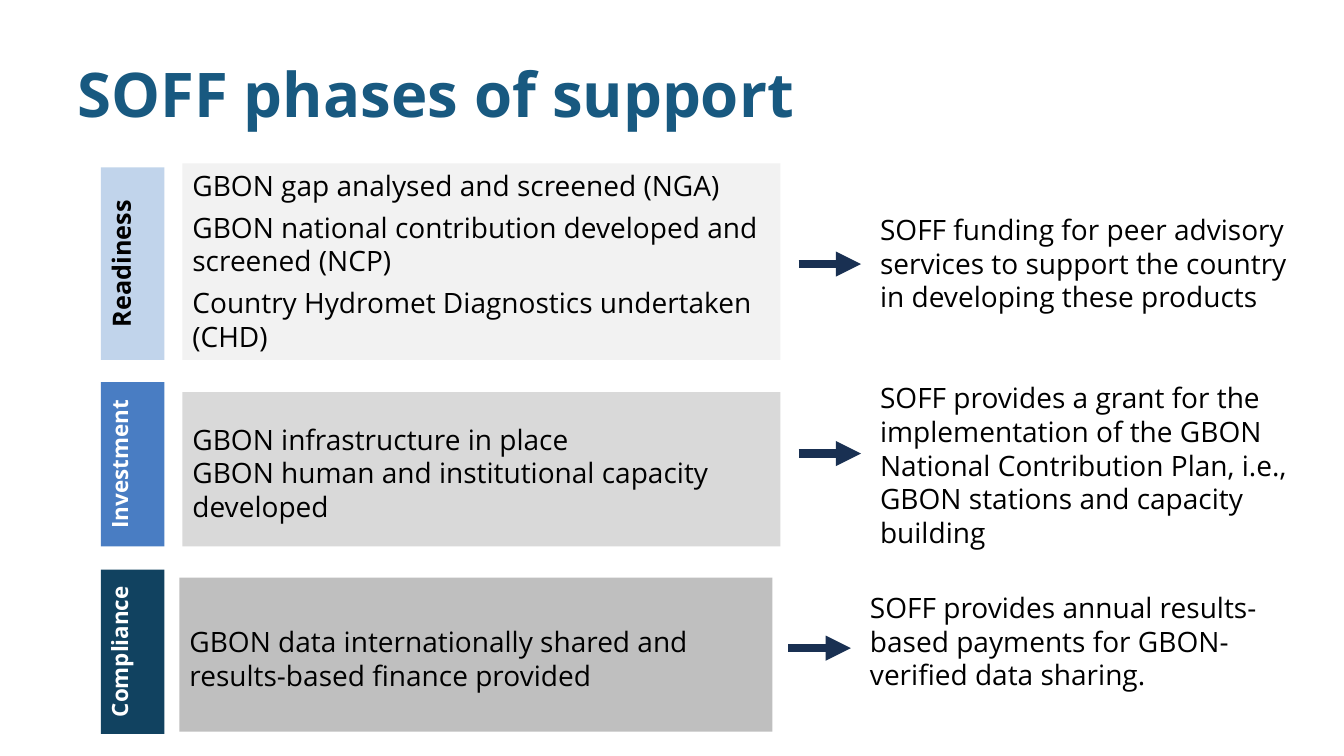
from lxml import etree
from pptx import Presentation
from pptx.dml.color import RGBColor
from pptx.enum.shapes import MSO_CONNECTOR, MSO_SHAPE
from pptx.enum.text import MSO_ANCHOR, PP_ALIGN
from pptx.oxml.ns import qn
from pptx.util import Pt

PX = 9144
FONT = "Open Sans"
RECTANGLE = MSO_SHAPE.RECTANGLE
STRAIGHT = MSO_CONNECTOR.STRAIGHT
TOP, MIDDLE = MSO_ANCHOR.TOP, MSO_ANCHOR.MIDDLE
LEFT, CENTER = PP_ALIGN.LEFT, PP_ALIGN.CENTER

BLACK = RGBColor(0x00, 0x00, 0x00)
WHITE = RGBColor(0xFF, 0xFF, 0xFF)
TITLE_BLUE = RGBColor(0x18, 0x59, 0x80)
NAVY = RGBColor(0x19, 0x30, 0x52)
PALE_BLUE = RGBColor(0xC1, 0xD4, 0xEB)
MID_BLUE = RGBColor(0x49, 0x7D, 0xC3)
DEEP_BLUE = RGBColor(0x11, 0x42, 0x60)
LIGHT_GREY = RGBColor(0xF2, 0xF2, 0xF2)
MID_GREY = RGBColor(0xD9, 0xD9, 0xD9)
DARK_GREY = RGBColor(0xBF, 0xBF, 0xBF)

LABEL_LEFT, LABEL_WIDTH = 100, 63
ARROW_LENGTH, OUTCOME_OFFSET = 62, 71

PHASES = [
    dict(label="Readiness", label_top=166, label_height=191, label_size=18,
         label_fill=PALE_BLUE, label_color=BLACK,
         panel=(181, 162, 593, 195), panel_fill=LIGHT_GREY, inset=5,
         steps=["GBON gap analysed and screened (NGA)",
                "GBON national contribution developed and screened (NCP)",
                "Country Hydromet Diagnostics undertaken (CHD)"],
         arrow=(792, 262), outcome_top=206, outcome_size=(442, 129),
         outcome="SOFF funding for peer advisory services to support the country "
                 "in developing these products"),
    dict(label="Investment", label_top=379, label_height=163, label_size=16,
         label_fill=MID_BLUE, label_color=WHITE,
         panel=(181, 389, 593, 153), panel_fill=MID_GREY, inset=30,
         steps=["GBON infrastructure in place\v"
                "GBON human and institutional capacity developed"],
         arrow=(792, 450), outcome_top=373, outcome_size=(442, 200),
         outcome="SOFF provides a grant for the implementation of the GBON "
                 "National Contribution Plan, i.e., GBON stations and capacity building"),
    dict(label="Compliance", label_top=565, label_height=163, label_size=16,
         label_fill=DEEP_BLUE, label_color=WHITE,
         panel=(178, 573, 588, 153), panel_fill=DARK_GREY, inset=47,
         steps=["GBON data internationally shared and results-based finance provided"],
         arrow=(782, 643), outcome_top=581, outcome_size=(468, 129),
         outcome="SOFF provides annual results-based payments for GBON-verified data sharing."),
]


def scaled(*lengths):
    return [round(length * PX) for length in lengths]


def write(holder, lines, size, color, bold=False, align=LEFT, anchor=TOP, inset=5):
    frame = holder.text_frame
    frame.word_wrap = True
    frame.vertical_anchor = anchor
    frame.margin_left, frame.margin_right, frame.margin_top, frame.margin_bottom = scaled(
        10, 10, inset, 5)
    for index, line in enumerate(lines):
        paragraph = frame.add_paragraph() if index else frame.paragraphs[0]
        paragraph.text = line
        paragraph.alignment = align
        paragraph.space_before = Pt(6 if index else 0)
        paragraph.font.name = FONT
        paragraph.font.size = Pt(size)
        paragraph.font.bold = bold
        paragraph.font.color.rgb = color


def add_block(slide, box, fill):
    block = slide.shapes.add_shape(RECTANGLE, *scaled(*box))
    block.shadow.inherit = False
    block.fill.solid()
    block.fill.fore_color.rgb = fill
    block.line.fill.background()
    return block


def add_text(slide, box, line, size, color, **style):
    write(slide.shapes.add_textbox(*scaled(*box)), [line], size, color, **style)


def add_label(slide, box, phase):
    left, top, width, height = box
    shift = (height - width) / 2
    label = add_block(slide, (left - shift, top + shift, height, width), phase["label_fill"])
    label.rotation = 270
    write(label, [phase["label"]], phase["label_size"], phase["label_color"],
          bold=True, align=CENTER)


def add_arrow(slide, left, y):
    arrow = slide.shapes.add_connector(STRAIGHT, *scaled(left, y, left + ARROW_LENGTH, y))
    arrow.line.color.rgb = NAVY
    arrow.line.width = Pt(6)
    etree.SubElement(arrow.line._get_or_add_ln(), qn("a:tailEnd"), type="triangle")
    etree.SubElement(arrow._element.spPr, qn("a:effectLst"))


def add_phase(slide, phase):
    add_label(slide, (LABEL_LEFT, phase["label_top"], LABEL_WIDTH, phase["label_height"]), phase)
    panel = add_block(slide, phase["panel"], phase["panel_fill"])
    write(panel, phase["steps"], 20, BLACK, inset=phase["inset"])
    arrow_left, arrow_y = phase["arrow"]
    add_arrow(slide, arrow_left, arrow_y)
    outcome_box = (arrow_left + OUTCOME_OFFSET, phase["outcome_top"], *phase["outcome_size"])
    add_text(slide, outcome_box, phase["outcome"], 20, BLACK)


def main():
    deck = Presentation()
    deck.slide_width, deck.slide_height = scaled(1333, 750)
    slide = deck.slides.add_slide(deck.slide_layouts[6])
    add_text(slide, (67, 30, 1200, 125), "SOFF phases of support", 44, TITLE_BLUE,
             bold=True, anchor=MIDDLE)
    for phase in PHASES:
        add_phase(slide, phase)
    deck.save("out.pptx")


if __name__ == "__main__":
    main()
